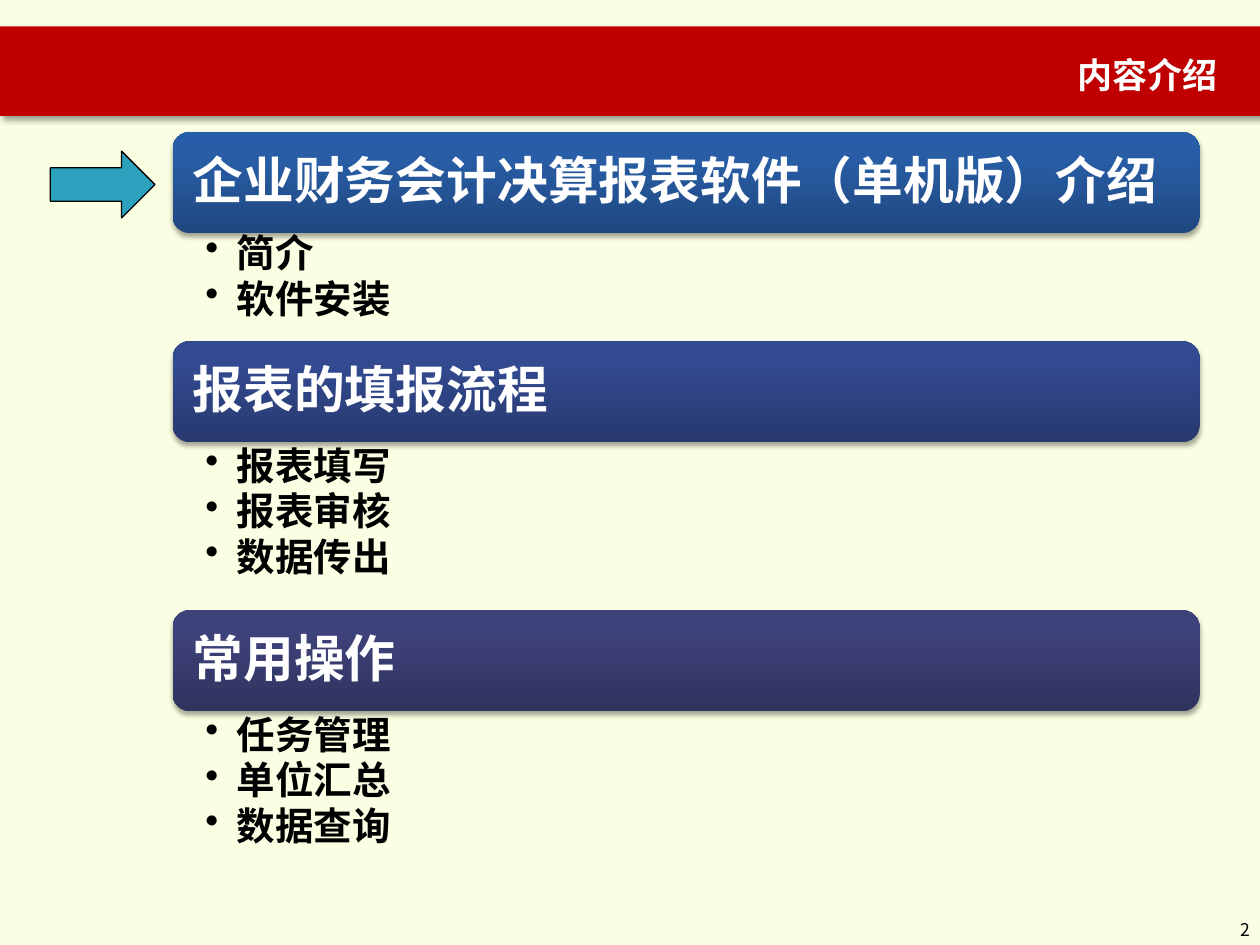
from copy import deepcopy
from dataclasses import dataclass

from lxml import etree
from pptx import Presentation
from pptx import util as u
from pptx.dml.color import RGBColor
from pptx.enum import shapes, text
from pptx.oxml import ns


@dataclass(frozen=True)
class Theme:
    """Colours, fonts and type sizes of the deck."""
    paper: str = "FAFEE2"
    banner: str = "C00000"
    arrow: str = "2DA2BF"
    ink: str = "000000"
    light: str = "FFFFFF"
    font: str = "Noto Sans CJK SC"
    agenda_font: str = "DejaVu Sans"
    number: int = 10
    title: int = 20
    item: int = 22
    heading: int = 29


class Deck:
    """Draws elements on a grid of 100 columns by 75 rows."""

    def __init__(self, theme):
        """Open a presentation with one blank slide."""
        self.theme = theme
        self.prs = Presentation()
        self.prs.slide_width, self.prs.slide_height = u.Inches(10), u.Inches(7.5)
        self.col, self.row = self.prs.slide_width / 100, self.prs.slide_height / 75
        self.s = self.prs.slides.add_slide(self.prs.slide_layouts[6])

    def place(self, x, y, w, h):
        """Turn columns and rows into lengths."""
        return [u.Emu(round(n)) for n in (x * self.col, y * self.row, w * self.col, h * self.row)]

    def shape(self, kind, box, color=None, line=None):
        """Add a preset shape without a shadow."""
        sp = self.s.shapes.add_shape(kind, *self.place(*box))
        sp.shadow.inherit = False
        if color:
            sp.fill.solid()
            sp.fill.fore_color.rgb = RGBColor.from_string(color)
        if line:
            sp.line.color.rgb = RGBColor.from_string(line)
            sp.line.width = u.Pt(0.75)
        else:
            sp.line.fill.background()
        return sp

    def shadow(self, sp, alpha, blur, dist, angle):
        """Give a shape a black outer shadow."""
        effects = sp._element.spPr.find(ns.qn("a:effectLst"))
        outer = etree.SubElement(effects, ns.qn("a:outerShdw"), blurRad=str(u.Pt(blur)),
                                 dist=str(u.Pt(dist)), dir=str(angle * 60000), rotWithShape="0")
        black = etree.SubElement(outer, ns.qn("a:srgbClr"), val=self.theme.ink)
        etree.SubElement(black, ns.qn("a:alpha"), val=str(alpha * 1000))

    def gradient(self, sp, colors):
        """Fill a shape upwards with three colours, the middle one at 80%."""
        sp.fill.gradient()
        sp.fill.gradient_angle = 90
        stops = sp._element.spPr.find(".//" + ns.qn("a:gsLst"))
        stops.append(deepcopy(stops[-1]))
        for stop, color, position in zip(sp.fill.gradient_stops, colors, (0, 0.8, 1)):
            stop.color.rgb = RGBColor.from_string(color)
            stop.position = position

    def frame(self, sp, lines, insets=(0.1, 0.05, 0.1, 0.05), anchor=text.MSO_ANCHOR.MIDDLE):
        """Put lines into a shape and return its paragraphs."""
        tf = sp.text_frame
        tf.word_wrap = True
        tf.vertical_anchor = anchor
        tf.margin_left, tf.margin_top, tf.margin_right, tf.margin_bottom = map(u.Inches, insets)
        tf.text = "\n".join(lines)
        return tf.paragraphs

    def style(self, p, size, color, font, bold=True, align=text.PP_ALIGN.LEFT):
        """Format a paragraph and its runs."""
        p.alignment = align
        for r in p.runs:
            r.font.size, r.font.bold, r.font.name = u.Pt(size), bold, font
            r.font.color.rgb = RGBColor.from_string(color)
            etree.SubElement(r.font._element, ns.qn("a:ea"), typeface=self.theme.font)

    def label(self, box, words, size, color, bold):
        """Add a right-aligned line of text."""
        sp = self.s.shapes.add_textbox(*self.place(*box))
        for p in self.frame(sp, [words]):
            self.style(p, size, color, self.theme.font, bold, text.PP_ALIGN.RIGHT)

    def heading(self, box, words, colors):
        """Add a rounded agenda bar."""
        sp = self.shape(shapes.MSO_SHAPE.ROUNDED_RECTANGLE, box)
        self.gradient(sp, colors)
        self.shadow(sp, 35, 3.1, 1.8, 90)
        for p in self.frame(sp, [words], (0.12,) * 4):
            p.line_spacing = 0.9
            self.style(p, self.theme.heading, self.theme.light, self.theme.agenda_font)

    def bullets(self, box, items):
        """Add a bulleted list."""
        sp = self.s.shapes.add_textbox(*self.place(*box))
        for p in self.frame(sp, items, (0.26, 0.04, 0.23, 0.04), text.MSO_ANCHOR.TOP):
            pPr = p._p.get_or_add_pPr()
            pPr.set("marL", str(u.Inches(0.25)))
            pPr.set("indent", str(u.Inches(-0.25)))
            etree.SubElement(pPr, ns.qn("a:buChar"), char="•")
            p.level = 1
            p.line_spacing = 0.9
            p.space_after = u.Pt(2.2)
            self.style(p, self.theme.item, self.theme.ink, self.theme.agenda_font)


AGENDA = [
    ("企业财务会计决算报表软件（单机版）介绍", ["简介", "软件安装"],
     ("1F4880", "295EA7", "265EAA"), 0.3),
    ("报表的填报流程", ["报表填写", "报表审核", "数据传出"],
     ("27396F", "334A90", "324993"), 0),
    ("常用操作", ["任务管理", "单位汇总", "数据查询"],
     ("30335E", "3E427A", "3D417C"), 0),
]


def main():
    """Build the agenda slide."""
    theme = Theme()
    deck = Deck(theme)
    deck.shape(shapes.MSO_SHAPE.RECTANGLE, (0, 0, 100.2, 75), theme.paper)
    banner = deck.shape(shapes.MSO_SHAPE.RECTANGLE, (0, 2.1, 100.2, 7.1), theme.banner)
    deck.shadow(banner, 40, 4, 3, 45)
    deck.label((94.2, 72.6, 6, 2.4), "2", theme.number, theme.ink, False)
    deck.label((22.3, 3.4, 75.3, 5), "内容介绍", theme.title, theme.light, True)

    left, width, bar, line = 13.7, 81.5, 8, 4.45
    top = 10.2
    for words, items, colors, drop in AGENDA:
        deck.heading((left, top + drop, width, bar), words, colors)
        deck.bullets((left, top + bar, width, line * len(items)), items)
        top += bar + line * len(items)

    deck.shape(shapes.MSO_SHAPE.RIGHT_ARROW, (4, 12, 8.3, 5.3), theme.arrow, theme.ink)
    deck.prs.save("out.pptx")


if __name__ == "__main__":
    main()
